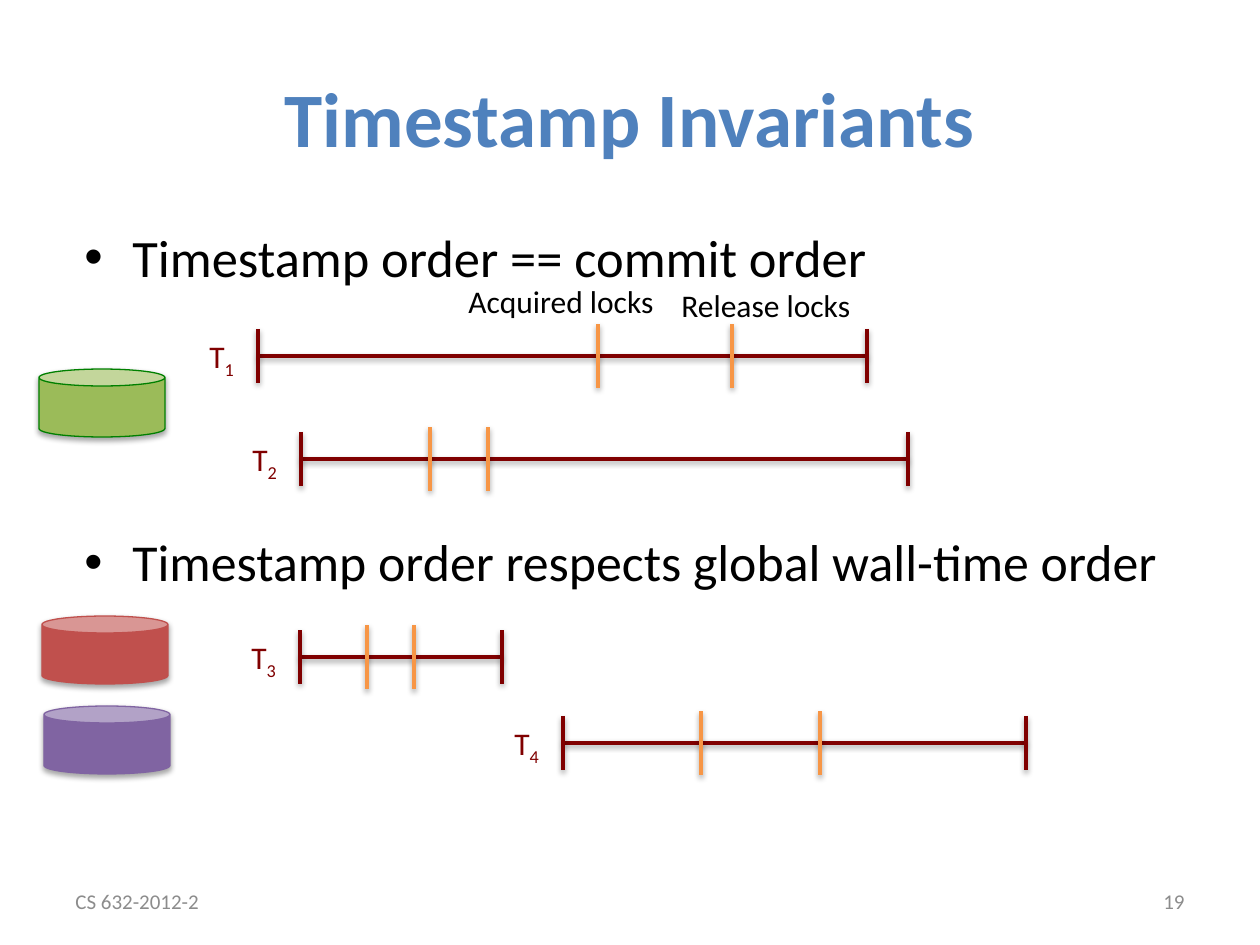
from dataclasses import dataclass

from pptx import Presentation
from pptx import util as u
from pptx.dml.color import RGBColor
from pptx.enum import shapes, text
from pptx.oxml import parse_xml
from pptx.oxml.ns import nsdecls, qn

PX = 914400 / 126


@dataclass(frozen=True)
class Theme:
    font: str = "Calibri"
    title: str = "4F81BD"
    ink: str = "000000"
    footer: str = "8C8C8C"
    timeline: str = "800000"
    lock: str = "F79646"
    green: str = "9BBB59"
    green_edge: str = "008000"
    red: str = "C0504D"
    purple: str = "8064A2"
    title_size: float = 44
    body_size: float = 30
    long_body_size: float = 29.6
    label_size: float = 18
    footer_size: float = 12


theme = Theme()


def add_text(parent, bounds, words, size, color, align=text.PP_ALIGN.LEFT,
             anchor=text.MSO_ANCHOR.TOP, wrap=True):
    box = parent.add_textbox(*[u.Emu(round(v * PX)) for v in bounds])
    frame = box.text_frame
    frame.text = words
    frame.word_wrap = wrap
    frame.vertical_anchor = anchor
    para = frame.paragraphs[0]
    para.alignment = align
    span = para.runs[0]
    span.font.name = theme.font
    span.font.size = u.Pt(size)
    span.font.color.rgb = RGBColor.from_string(color)
    return box


def style_outline(shape, color, width, distance, opacity):
    """Set the line and a soft shadow falling straight down."""
    shape.line.color.rgb = RGBColor.from_string(color)
    shape.line.width = u.Pt(width)
    shape._element.spPr.append(parse_xml(
        f'<a:effectLst {nsdecls("a")}><a:outerShdw blurRad="40000" dist="{distance}" '
        f'dir="5400000" rotWithShape="0"><a:srgbClr val="000000">'
        f'<a:alpha val="{opacity}000"/></a:srgbClr></a:outerShdw></a:effectLst>'))


deck = Presentation()
deck.slide_width, deck.slide_height = u.Inches(10), u.Inches(7.5)
page = deck.slides.add_slide(deck.slide_layouts[6])

title = add_text(page.shapes, (63, 38, 1134, 157), "Timestamp Invariants",
                 theme.title_size, theme.title, text.PP_ALIGN.CENTER, text.MSO_ANCHOR.MIDDLE)
title.text_frame.paragraphs[0].runs[0].font.bold = True

for left, words, align in ((63, "CS 632-2012-2", text.PP_ALIGN.LEFT),
                           (903, "19", text.PP_ALIGN.RIGHT)):
    add_text(page.shapes, (left, 876, 294, 50), words, theme.footer_size, theme.footer,
             align, text.MSO_ANCHOR.MIDDLE)

for top, height, words, size in (
        (219, 108, "Timestamp order == commit order", theme.body_size),
        (524, 134, "Timestamp order respects global wall-time order", theme.long_body_size)):
    box = add_text(page.shapes, (72, top, 1134, height), words, size, theme.ink)
    properties = box.text_frame.paragraphs[0]._p.get_or_add_pPr()
    indent = round(48 * PX)
    properties.set("marL", str(indent))
    properties.set("indent", str(-indent))
    properties.append(parse_xml(f'<a:buFont {nsdecls("a")} typeface="Arial"/>'))
    properties.append(parse_xml(f'<a:buChar {nsdecls("a")} char="•"/>'))

# transaction number, start, end, height on the page, lock times
timelines = (
    (2, 301, 908, 459, (430, 488)),
    (3, 300, 502, 657, (367, 414)),
    (4, 563, 1026, 743, (701, 820)),
    (1, 258, 867, 356, (598, 732)),
)
for number, start, end, y, locks in timelines:
    group = page.shapes.add_group_shape()
    strokes = [(group, theme.timeline, start, y, end, y)]
    strokes += [(group, theme.timeline, x, y - 27, x, y + 27) for x in (start, end)]
    strokes += [(page, theme.lock, x, y + 32, x, y - 32) for x in locks]
    for parent, color, *ends in strokes:
        line = parent.shapes.add_connector(
            shapes.MSO_CONNECTOR.STRAIGHT, *[u.Emu(round(v * PX)) for v in ends])
        style_outline(line, color, 2, 20000, 38)
    label = add_text(group.shapes, (start - 61, y - 25, 57, 50), "T",
                     theme.label_size, theme.timeline)
    para = label.text_frame.paragraphs[0]
    subscript = para.add_run()
    subscript.text = str(number)
    subscript.font.name = theme.font
    subscript.font.size = u.Pt(theme.label_size)
    subscript.font.color.rgb = RGBColor.from_string(theme.timeline)
    subscript._r.find(qn("a:rPr")).set("baseline", "-25000")

for left, top, fill, edge in ((39, 369, theme.green, theme.green_edge),
                              (44, 706, theme.purple, theme.purple),
                              (42, 616, theme.red, theme.red)):
    can = page.shapes.add_shape(shapes.MSO_SHAPE.CAN,
                                *[u.Emu(round(v * PX)) for v in (left, top, 126, 68)])
    can.fill.solid()
    can.fill.fore_color.rgb = RGBColor.from_string(fill)
    style_outline(can, edge, 0.75, 23000, 35)

for bounds, words in (((456, 276, 213, 50), "Acquired locks"),
                      ((669, 280, 197, 50), "Release locks")):
    label = add_text(page.shapes, bounds, words, theme.label_size, theme.ink, wrap=False)
    label.text_frame.auto_size = text.MSO_AUTO_SIZE.SHAPE_TO_FIT_TEXT

deck.save("out.pptx")
